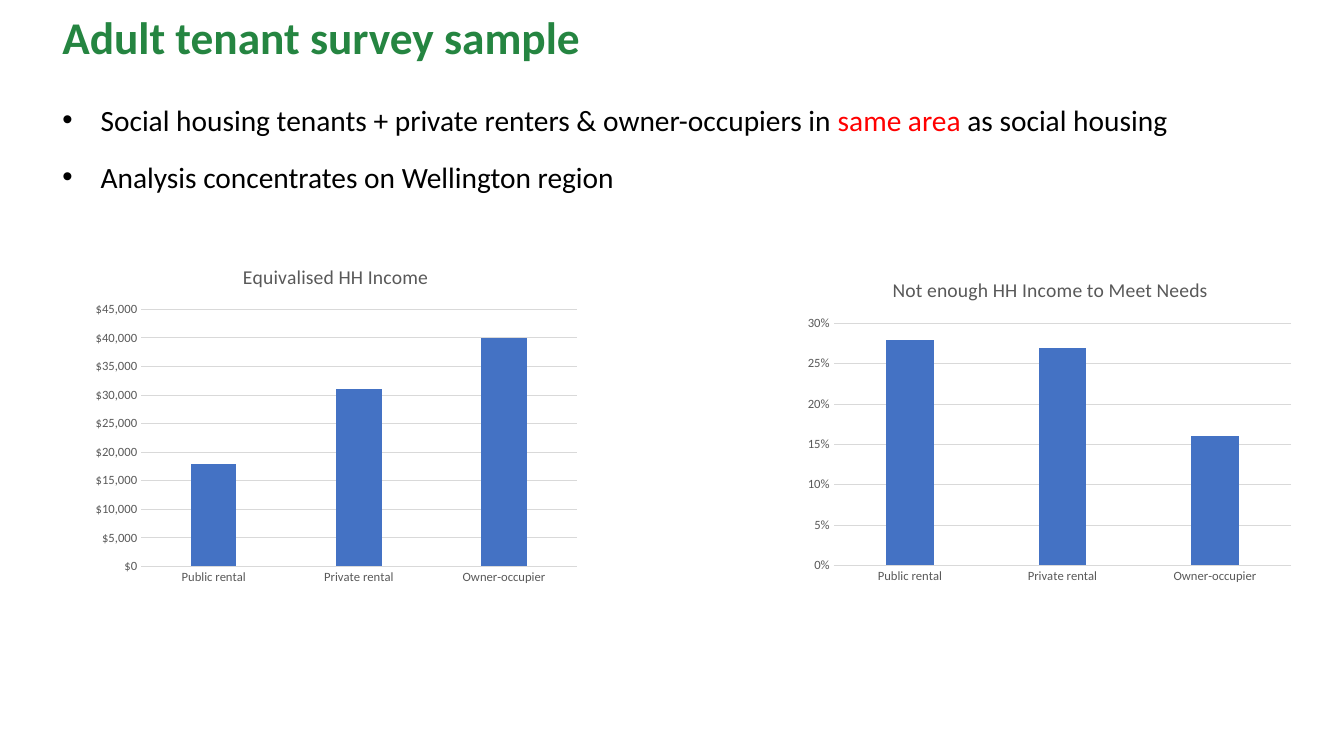
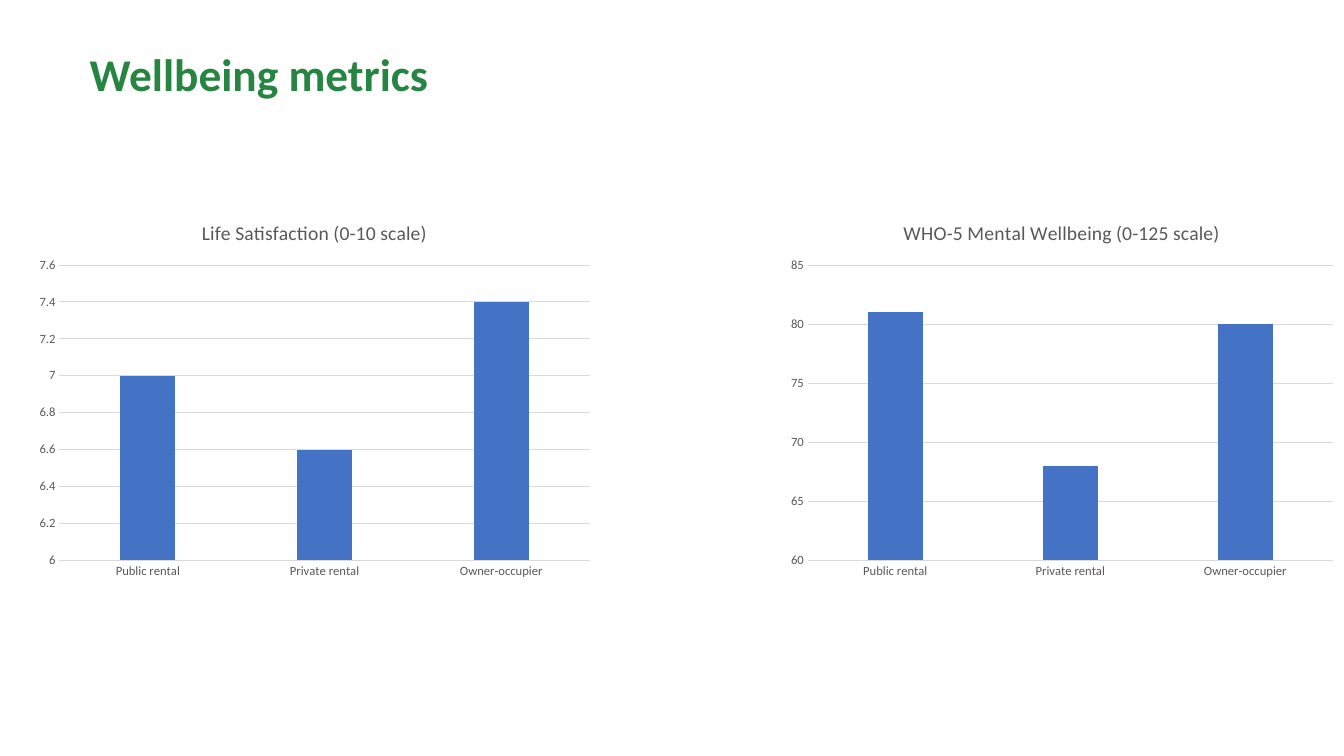
from lxml.etree import SubElement
from pptx import Presentation
from pptx.chart.data import CategoryChartData
from pptx.dml.color import RGBColor
from pptx.enum.chart import XL_CHART_TYPE as ChartType, XL_TICK_MARK as TickMark
from pptx.enum.text import MSO_ANCHOR as Anchor
from pptx.oxml import parse_xml
from pptx.oxml.ns import nsdecls, qn
from pptx.util import Emu, Inches, Pt

FONT = "Calibri"
GREEN, RED, BLACK = "258541", "FF0000", "000000"
BLUE, GREY, RULE = "4472C4", "595959", "D9D9D9"
TENURES = ["Public rental", "Private rental", "Owner-occupier"]
WIDTH, HEIGHT = Inches(13.33), Inches(7.5)
PLOT_TOP, PLOT_RIGHT, PLOT_BOTTOM = Inches(0.62), Inches(0.11), Inches(0.27)


def color(code):
    """Turn a hex string into a colour."""
    return RGBColor.from_string(code)


def share(left, top, width, height):
    """Turn percentages of the slide into a box."""
    return [Emu(round(full * part / 100)) for full, part in
            zip((WIDTH, HEIGHT, WIDTH, HEIGHT), (left, top, width, height))]


def style(font, size, code, bold=False):
    """Set the look of a font."""
    font.name, font.size, font.bold = FONT, Pt(size), bold
    font.color.rgb = color(code)


def add_text(page, box, anchor=Anchor.TOP):
    """Add a wrapping text box and return its frame."""
    frame = page.shapes.add_textbox(*box).text_frame
    frame.word_wrap = True
    frame.vertical_anchor = anchor
    return frame


def add_title(page, left, top, text):
    """Place the slide title."""
    para = add_text(page, share(left, top, 86.5, 8.4), Anchor.BOTTOM).paragraphs[0]
    para.text = text
    para.line_spacing = 0.9
    style(para.font, 32.4, GREEN, True)


def add_bullets(page, box, items):
    """Place bulleted lines, each a list of (text, colour) spans."""
    frame = add_text(page, box)
    for index, spans in enumerate(items):
        para = frame.paragraphs[0] if index == 0 else frame.add_paragraph()
        para.line_spacing = 0.9
        para.space_before = Pt(10 if index else 0)
        para.space_after = Pt(8)
        props = para._p.get_or_add_pPr()
        props.set("marL", str(Inches(0.38)))
        props.set("indent", str(-Inches(0.38)))
        SubElement(props, qn("a:buFont")).set("typeface", "Arial")
        SubElement(props, qn("a:buChar")).set("char", "•")
        style(para.font, 21, BLACK)
        for text, code in spans:
            span = para.add_run()
            span.text = text
            span.font.color.rgb = color(code)


def set_plot(chart, box, inset):
    """Fix the inner plot area by its margins inside the chart box."""
    width, height = box[2:]
    sizes = {"x": inset / width, "y": PLOT_TOP / height,
             "w": 1 - (inset + PLOT_RIGHT) / width,
             "h": 1 - (PLOT_TOP + PLOT_BOTTOM) / height}
    modes = '<c:layoutTarget val="inner"/><c:xMode val="edge"/><c:yMode val="edge"/>'
    values = "".join(f'<c:{key} val="{size:.4f}"/>' for key, size in sizes.items())
    area = chart._chartSpace.find(f".//{qn('c:plotArea')}")
    for layout in area.findall(qn("c:layout")):
        area.remove(layout)
    area.insert(0, parse_xml(f'<c:layout {nsdecls("c")}><c:manualLayout>'
                             f'{modes}{values}</c:manualLayout></c:layout>'))


def add_columns(page, box, title, values, scale, inset, number_format="General"):
    """Place a column chart; scale is the axis minimum, maximum and step."""
    data = CategoryChartData()
    data.categories = TENURES
    data.add_series("Series 1", values)
    chart = page.shapes.add_chart(ChartType.COLUMN_CLUSTERED, *box, data).chart
    style(chart.font, 10, BLACK)
    chart.has_legend = False
    chart.has_title = True
    heading = chart.chart_title.text_frame.paragraphs[0]
    heading.text = title
    style(heading.font, 14, GREY)

    plot = chart.plots[0]
    plot.gap_width, plot.overlap, plot.vary_by_categories = 219, -27, False
    fill = plot.series[0].format.fill
    fill.solid()
    fill.fore_color.rgb = color(BLUE)

    names, amounts = chart.category_axis, chart.value_axis
    for axis in (names, amounts):
        axis.major_tick_mark = axis.minor_tick_mark = TickMark.NONE
        style(axis.tick_labels.font, 9, GREY)
    amounts.minimum_scale, amounts.maximum_scale, amounts.major_unit = scale
    amounts.tick_labels.number_format = number_format
    amounts.tick_labels.number_format_is_linked = False
    amounts.format.line.fill.background()
    for line in (names.format.line, amounts.major_gridlines.format.line):
        line.color.rgb = color(RULE)
        line.width = Pt(0.75)
    set_plot(chart, box, Inches(inset))


def sample_slide(page):
    """Describe the survey sample and its incomes."""
    add_title(page, 3.9, 0.8, "Adult tenant survey sample")
    add_bullets(page, share(3.9, 13.33, 93.85, 16), [
        [("Social housing tenants + private renters & owner-occupiers in ", BLACK),
         ("same area ", RED), ("as social housing", BLACK)],
        [("Analysis concentrates on Wellington region", BLACK)]])
    add_columns(page, share(6.23, 32.67, 37.5, 45.87), "Equivalised HH Income",
                [18000, 31000, 40000], (0, 45000, 5000), 0.57, '"$"#,##0')
    add_columns(page, share(59.4, 34.53, 37.5, 43.87),
                "Not enough HH Income to Meet Needs",
                [0.28, 0.27, 0.16], (0, 0.3, 0.05), 0.35, "0%")


def wellbeing_slide(page):
    """Compare the two wellbeing measures."""
    add_title(page, 5.93, 5.6, "Wellbeing metrics")
    add_columns(page, share(2.1, 26.8, 42.6, 50.93), "Life Satisfaction (0-10 scale)",
                [7, 6.6, 7.4], (6, 7.6, 0.2), 0.31)
    add_columns(page, share(58, 26.8, 42, 50.93),
                "WHO-5 Mental Wellbeing (0-125 scale)",
                [81, 68, 80], (60, 85, 5), 0.28)


def main():
    """Build and save the deck."""
    deck = Presentation()
    deck.slide_width, deck.slide_height = WIDTH, HEIGHT
    for build in (sample_slide, wellbeing_slide):
        build(deck.slides.add_slide(deck.slide_layouts[6]))
    deck.save("out.pptx")


if __name__ == "__main__":
    main()
